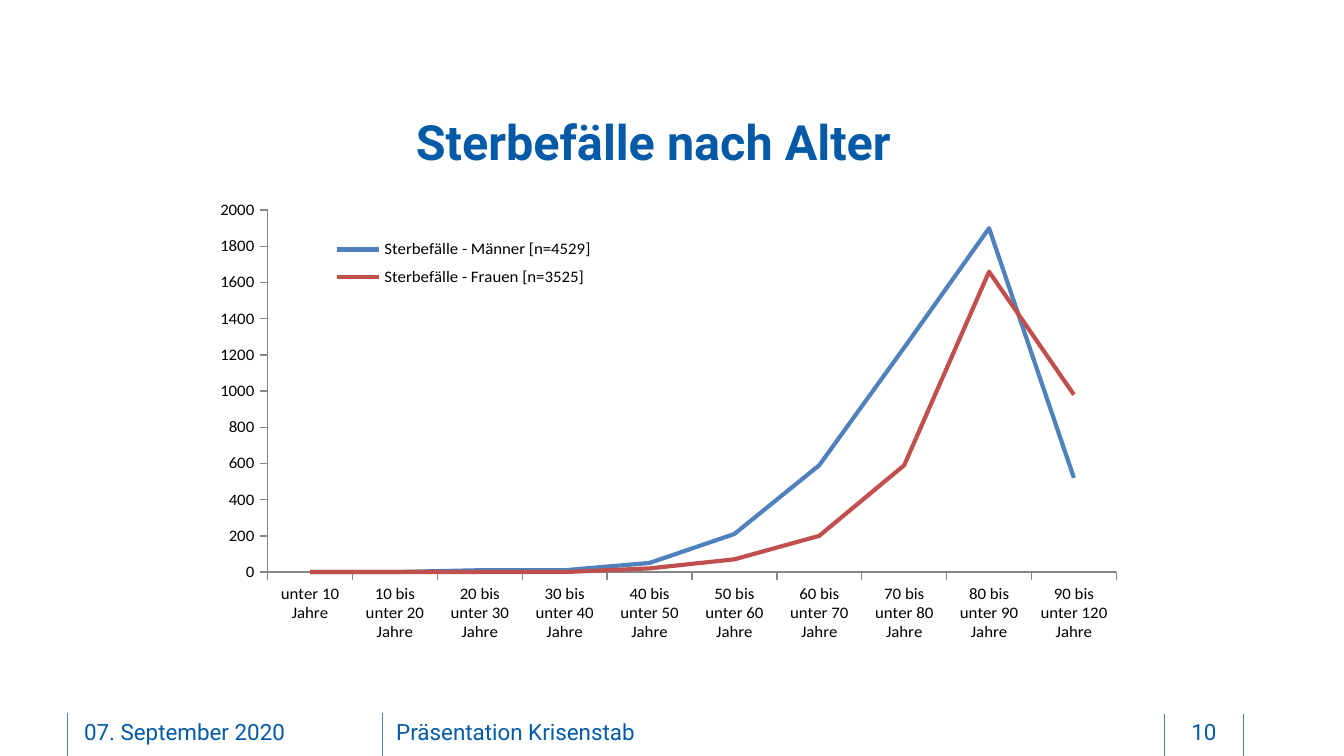
from lxml import etree
from pptx import Presentation
from pptx.chart.data import CategoryChartData
from pptx.dml.color import RGBColor
from pptx.enum.chart import XL_CHART_TYPE, XL_LEGEND_POSITION, XL_MARKER_STYLE, XL_TICK_MARK
from pptx.enum.shapes import MSO_CONNECTOR
from pptx.enum.text import MSO_ANCHOR, MSO_AUTO_SIZE, PP_ALIGN
from pptx.oxml import parse_xml
from pptx.oxml.ns import nsdecls, qn
from pptx.util import Emu, Pt

LINE_CHART = XL_CHART_TYPE.LINE
LEGEND_RIGHT = XL_LEGEND_POSITION.RIGHT
NO_MARKER = XL_MARKER_STYLE.NONE
TICK_OUTSIDE = XL_TICK_MARK.OUTSIDE
TICK_NONE = XL_TICK_MARK.NONE
STRAIGHT = MSO_CONNECTOR.STRAIGHT
MIDDLE = MSO_ANCHOR.MIDDLE
NO_AUTOFIT = MSO_AUTO_SIZE.NONE
LEFT, CENTER = PP_ALIGN.LEFT, PP_ALIGN.CENTER

EMU_PER_PX = 9525
BRAND_BLUE = "045AA6"
RULE_BLUE = "4F81BD"
AXIS_GRAY = "868686"

AGE_GROUPS = ["unter 10 Jahre"]
AGE_GROUPS += [f"{age} bis unter {age + 10} Jahre" for age in range(10, 90, 10)]
AGE_GROUPS += ["90 bis unter 120 Jahre"]
DEATHS = [
    ("Sterbefälle - Männer [n=4529]", "4F81BD", [0, 0, 10, 10, 50, 210, 590, 1240, 1900, 520]),
    ("Sterbefälle - Frauen [n=3525]", "C0504D", [0, 0, 0, 0, 20, 70, 200, 590, 1660, 980]),
]


def px(length):
    return Emu(length * EMU_PER_PX)


def color(hex_string):
    return RGBColor.from_string(hex_string)


def format_font(font, name, size, hex_string, bold=False):
    font.name = name
    font.size = Pt(size)
    font.bold = bold
    font.color.rgb = color(hex_string)


def fill_text(shape, text, size, alignment, inset_y=0, bold=False):
    frame = shape.text_frame
    frame.word_wrap = True
    frame.auto_size = NO_AUTOFIT
    frame.vertical_anchor = MIDDLE
    frame.margin_left = frame.margin_right = 0
    frame.margin_top = frame.margin_bottom = px(inset_y)
    frame.text = text
    paragraph = frame.paragraphs[0]
    paragraph.alignment = alignment
    format_font(paragraph.font, "Roboto", size, BRAND_BLUE, bold)


def add_title(slide, left, top, width, height):
    title = slide.shapes.title
    title.left, title.top, title.width, title.height = map(px, (left, top, width, height))
    fill_text(title, "Sterbefälle nach Alter", 26, CENTER, bold=True)


def add_footer(slide, left, top, width, height):
    for x, y in [(0, 1), (225, 1), (width - 56, 2), (width, 2)]:
        rule = slide.shapes.add_connector(
            STRAIGHT, px(left + x), px(top + y), px(left + x), px(top + y + 32))
        rule.line.color.rgb = color(RULE_BLUE)
        rule.line.width = Pt(0.5)
        etree.SubElement(rule._element.spPr, qn("a:effectLst"))

    for text, x, box_width, alignment in [
        ("07. September 2020", 12, 195, LEFT),
        ("Präsentation Krisenstab", 235, 304, LEFT),
        ("10", width - 54, 52, CENTER),
    ]:
        box = slide.shapes.add_textbox(px(left + x), px(top), px(box_width), px(height))
        fill_text(box, text, 12, alignment, inset_y=5)


def set_layout(element, x, y, width, height, inner=False):
    for old in element.findall(qn("c:layout")):
        element.remove(old)
    target = '<c:layoutTarget val="inner"/>' if inner else ""
    layout = parse_xml(
        f'<c:layout {nsdecls("c")}><c:manualLayout>{target}'
        '<c:xMode val="edge"/><c:yMode val="edge"/>'
        f'<c:x val="{x}"/><c:y val="{y}"/><c:w val="{width}"/><c:h val="{height}"/>'
        '</c:manualLayout></c:layout>')
    if inner:
        element.insert(0, layout)
    else:
        element.find(qn("c:legendPos")).addnext(layout)


def add_deaths_chart(slide, left, top, width, height):
    data = CategoryChartData(number_format="0")
    data.categories = AGE_GROUPS
    for name, _, values in DEATHS:
        data.add_series(name, values)
    chart = slide.shapes.add_chart(
        LINE_CHART, px(left), px(top), px(width), px(height), data).chart
    chart.has_title = False
    format_font(chart.font, "Calibri", 10, "000000")

    plot = chart.plots[0]
    plot.vary_by_categories = False
    for series, (_, line_color, _) in zip(plot.series, DEATHS):
        series.smooth = False
        series.marker.style = NO_MARKER
        series.format.line.color.rgb = color(line_color)
        series.format.line.width = Pt(2.25)

    for axis in (chart.category_axis, chart.value_axis):
        axis.has_major_gridlines = False
        axis.major_tick_mark = TICK_OUTSIDE
        axis.minor_tick_mark = TICK_NONE
        axis.format.line.color.rgb = color(AXIS_GRAY)
        axis.format.line.width = Pt(0.75)
        format_font(axis.tick_labels.font, "Calibri", 9, "000000")
    chart.value_axis.minimum_scale = 0
    chart.value_axis.maximum_scale = 2000
    chart.value_axis.major_unit = 200
    chart.value_axis.tick_labels.number_format = "0"
    chart.value_axis.tick_labels.number_format_is_linked = False

    chart.has_legend = True
    legend = chart.legend
    legend.position = LEGEND_RIGHT
    legend.include_in_layout = False
    format_font(legend.font, "Calibri", 9, "000000")
    set_layout(legend._element, 0.12, 0.08, 0.31, 0.15)
    set_layout(chart._chartSpace.chart.plotArea, 0.06, 0.03, 0.93, 0.85, inner=True)


def main():
    presentation = Presentation()
    presentation.slide_width = px(960)
    presentation.slide_height = px(540)
    slide = presentation.slides.add_slide(presentation.slide_layouts[5])
    add_title(slide, 48, 66, 838, 69)
    add_footer(slide, 48, 508, 840, 29)
    add_deaths_chart(slide, 152, 141, 652, 317)
    presentation.save("out.pptx")


if __name__ == "__main__":
    main()
